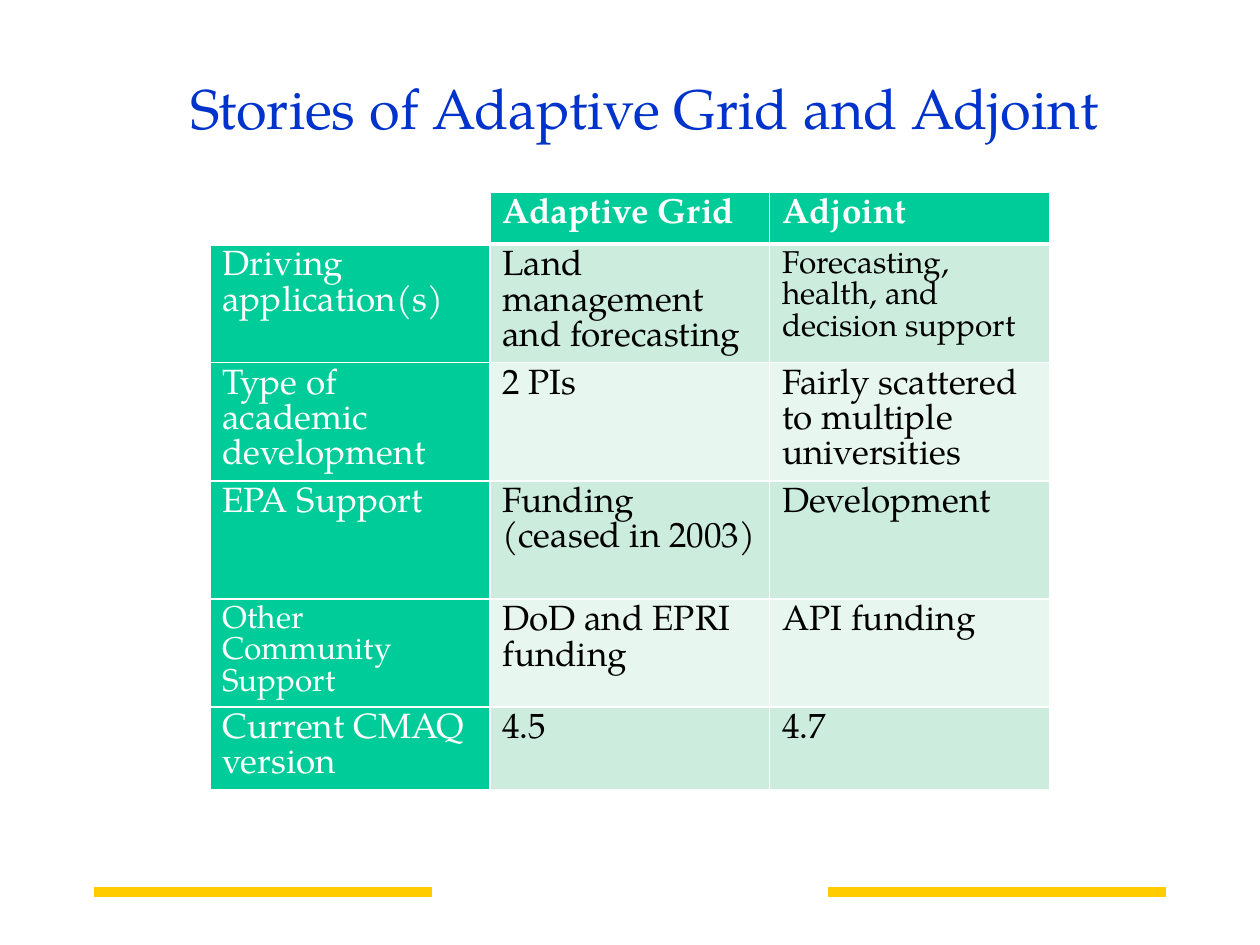
from lxml import etree
from pptx import Presentation
from pptx.dml.color import RGBColor
from pptx.enum import shapes, text
from pptx.oxml import ns
from pptx.util import Cm, Pt

FONT = "TeX Gyre Pagella"
GREEN, WHITE, BLACK = "00CC99", "FFFFFF", "000000"
BANDS = "CCECDE", "E7F6EF"
ROWS = [
    ("", "Adaptive Grid", "Adjoint"),
    ("Driving application(s)", "Land management and forecasting",
     "Forecasting, health, and decision support"),
    ("Type of academic development", "2 PIs",
     "Fairly scattered to multiple universities"),
    ("EPA Support", "Funding (ceased in 2003)", "Development"),
    ("Other Community\nSupport", "DoD and EPRI funding", "API funding"),
    ("Current CMAQ version", "4.5", "4.7"),
]
HEIGHTS = 1.04, 2.38, 2.38, 2.38, 2.16, 1.68
SMALL = {(1, 2), (4, 0)}


def color(code):
    return RGBColor.from_string(code)


def style(para, size, code, bold=False):
    font = para.font
    font.name, font.size, font.bold = FONT, Pt(size), bold
    font.color.rgb = color(code)


def add_title(slide, words):
    title = slide.shapes.title
    title.left, title.top = Cm(2.2), Cm(0.56)
    title.width, title.height = Cm(21.6), Cm(3.18)
    frame = title.text_frame
    frame.text = words
    frame.vertical_anchor = text.MSO_ANCHOR.MIDDLE
    para = frame.paragraphs[0]
    para.alignment = text.PP_ALIGN.CENTER
    style(para, 32, "0033CC")


def add_bar(slide, start, end):
    bar = slide.shapes.add_connector(
        shapes.MSO_CONNECTOR.STRAIGHT, Cm(start), Cm(17.98), Cm(end), Cm(17.98))
    bar.line.color.rgb = color("FFCC00")
    bar.line.width = Pt(6)
    etree.SubElement(bar._element.spPr, ns.qn("a:effectLst"))


def add_edges(cell, top, bottom):
    """Draw white cell borders; top and bottom are widths in points."""
    props = cell._tc.get_or_add_tcPr()
    for side, width in zip("LRTB", (1, 1, top, bottom)):
        line = etree.SubElement(props, ns.qn(f"a:ln{side}"), w=str(Pt(width)))
        fill = etree.SubElement(line, ns.qn("a:solidFill"))
        etree.SubElement(fill, ns.qn("a:srgbClr"), val=WHITE)


def fill_cell(cell, words, row, col):
    head = row == 0
    add_edges(cell, 3 if row == 1 else 1, 3 if head else 1)
    if head and col == 0:
        back = WHITE
    elif head or col == 0:
        back = GREEN
    else:
        back = BANDS[(row - 1) % 2]
    cell.fill.solid()
    cell.fill.fore_color.rgb = color(back)
    cell.text = words
    for para in cell.text_frame.paragraphs:
        style(para, 18 if (row, col) in SMALL else 20,
              WHITE if back == GREEN else BLACK, head)


def add_grid(slide):
    table = slide.shapes.add_table(
        len(ROWS), 3, Cm(4.23), Cm(3.88), Cm(16.93), Cm(sum(HEIGHTS))).table
    for row, (height, line) in enumerate(zip(HEIGHTS, ROWS)):
        table.rows[row].height = Cm(height)
        for col, words in enumerate(line):
            fill_cell(table.cell(row, col), words, row, col)


def main():
    deck = Presentation()
    deck.slide_width, deck.slide_height = Cm(25.4), Cm(19.05)
    slide = deck.slides.add_slide(deck.slide_layouts[5])
    add_bar(slide, 8.7, 1.9)
    add_bar(slide, 16.7, 23.5)
    add_title(slide, "Stories of Adaptive Grid and Adjoint")
    add_grid(slide)
    deck.save("out.pptx")


if __name__ == "__main__":
    main()
